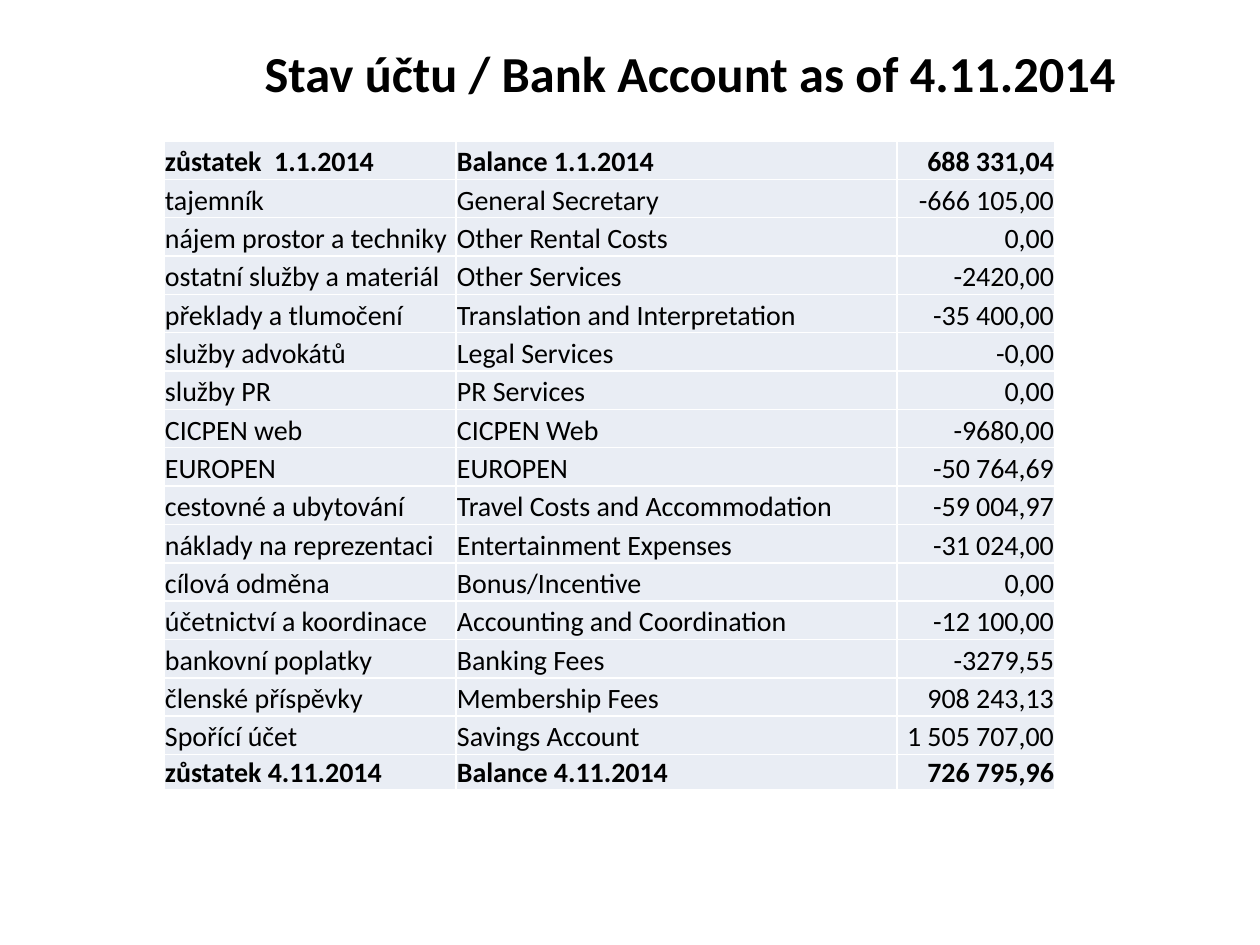
from lxml import etree
from pptx import Presentation
from pptx.dml.color import RGBColor
from pptx.enum.text import MSO_ANCHOR, PP_ALIGN
from pptx.oxml.ns import qn
from pptx.util import Inches, Pt

LEFT, CENTER, RIGHT = PP_ALIGN.LEFT, PP_ALIGN.CENTER, PP_ALIGN.RIGHT
MIDDLE, BOTTOM = MSO_ANCHOR.MIDDLE, MSO_ANCHOR.BOTTOM
BLACK = RGBColor(0x00, 0x00, 0x00)
WHITE = RGBColor(0xFF, 0xFF, 0xFF)
PALE_BLUE = RGBColor(0xE9, 0xED, 0xF4)
FONT = "Calibri"
PX_PER_INCH = 126

TITLE_BOX = (184, 38, 1013, 68)
TABLE_BOX = (164, 141, 891, 649)
COLUMN_WIDTHS = (292, 441, 158)
COLUMN_ALIGNS = (LEFT, LEFT, RIGHT)
LAST_ROW_HEIGHT = 35

TITLE = "Stav účtu / Bank Account as of 4.11.2014"
ACCOUNT_ROWS = [
    ("zůstatek  1.1.2014", "Balance 1.1.2014", "688 331,04"),
    ("tajemník", "General Secretary", "-666 105,00"),
    ("nájem prostor a techniky", "Other Rental Costs", "0,00"),
    ("ostatní služby a materiál", "Other Services", "-2420,00"),
    ("překlady a tlumočení", "Translation and Interpretation", "-35 400,00"),
    ("služby advokátů", "Legal Services", "-0,00"),
    ("služby PR", "PR Services", "0,00"),
    ("CICPEN web", "CICPEN Web", "-9680,00"),
    ("EUROPEN", "EUROPEN", "-50 764,69"),
    ("cestovné a ubytování", "Travel Costs and Accommodation", "-59 004,97"),
    ("náklady na reprezentaci", "Entertainment Expenses", "-31 024,00"),
    ("cílová odměna", "Bonus/Incentive", "0,00"),
    ("účetnictví a koordinace", "Accounting and Coordination", "-12 100,00"),
    ("bankovní poplatky", "Banking Fees", "-3279,55"),
    ("členské příspěvky", "Membership Fees", "908 243,13"),
    ("Spořící účet", "Savings Account", "1 505 707,00"),
    ("zůstatek 4.11.2014", "Balance 4.11.2014", "726 795,96"),
]


def px(length):
    """Turn a length in px into EMU."""
    return Inches(length / PX_PER_INCH)


def write_text(frame, text, *, size, bold=False, align=LEFT, color=BLACK):
    """Write one formatted paragraph into a text frame."""
    para = frame.paragraphs[0]
    para.alignment = align
    span = para.add_run()
    span.text = text
    span.font.name = FONT
    span.font.size = Pt(size)
    span.font.bold = bold
    span.font.color.rgb = color


def add_borders(cell, color, width):
    """Draw a solid line on all four sides of a cell."""
    properties = cell._tc.get_or_add_tcPr()
    for side in ("a:lnL", "a:lnR", "a:lnT", "a:lnB"):
        line = etree.SubElement(properties, qn(side), w=str(Pt(width)))
        fill = etree.SubElement(line, qn("a:solidFill"))
        etree.SubElement(fill, qn("a:srgbClr"), val=str(color))


def add_title(page, box):
    """Place the centred page title in the given box."""
    frame = page.shapes.add_textbox(*map(px, box)).text_frame
    frame.word_wrap = True
    frame.vertical_anchor = MIDDLE
    frame.margin_top = frame.margin_bottom = 0
    write_text(frame, TITLE, size=28.8, bold=True, align=CENTER)


def add_account_cell(cell, text, align, bold):
    """Format one cell of the account table and fill in its text."""
    cell.margin_left = cell.margin_right = cell.margin_top = px(1)
    cell.margin_bottom = 0
    cell.vertical_anchor = BOTTOM
    add_borders(cell, WHITE, 1)
    cell.fill.solid()
    cell.fill.fore_color.rgb = PALE_BLUE
    write_text(cell.text_frame, text, size=16, bold=bold, align=align)


def add_account_table(page, box):
    """Place the account table with bold opening and closing balances."""
    last = len(ACCOUNT_ROWS) - 1
    table = page.shapes.add_table(
        len(ACCOUNT_ROWS), len(COLUMN_WIDTHS), *map(px, box)).table
    table.first_row = table.horz_banding = False
    for column, width in zip(table.columns, COLUMN_WIDTHS):
        column.width = px(width)
    row_height = (box[3] - LAST_ROW_HEIGHT) / last
    for index, texts in enumerate(ACCOUNT_ROWS):
        row = table.rows[index]
        row.height = px(LAST_ROW_HEIGHT if index == last else row_height)
        for cell, text, align in zip(row.cells, texts, COLUMN_ALIGNS):
            add_account_cell(cell, text, align, index in (0, last))


def main():
    """Build the one-page deck and save it."""
    deck = Presentation()
    deck.slide_width, deck.slide_height = px(1260), px(945)
    page = deck.slides.add_slide(deck.slide_layouts[6])
    add_account_table(page, TABLE_BOX)
    add_title(page, TITLE_BOX)
    deck.save("out.pptx")


if __name__ == "__main__":
    main()
